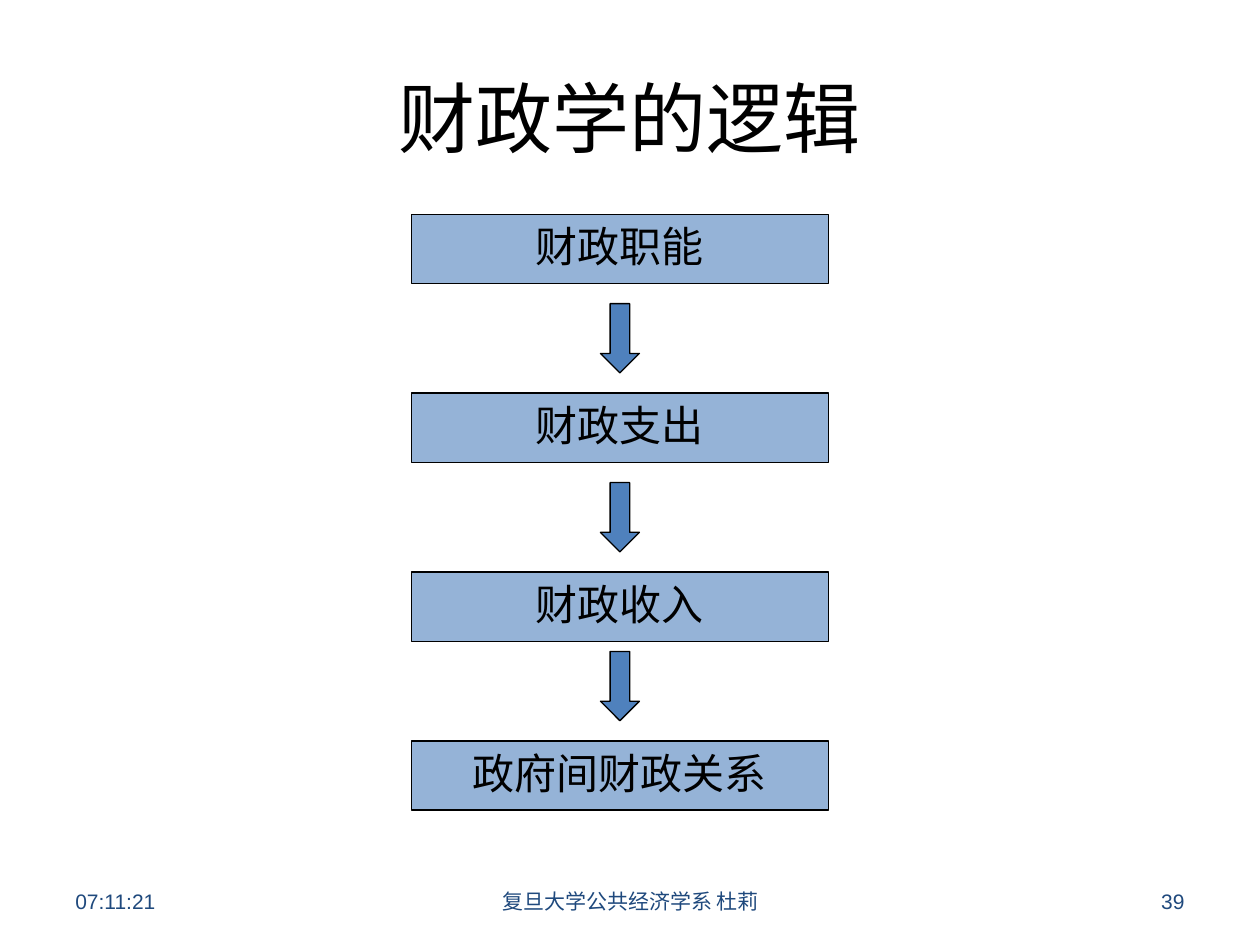
from pptx import Presentation
from pptx.dml.color import RGBColor
from pptx.enum.shapes import MSO_SHAPE
from pptx.enum.text import MSO_ANCHOR, PP_ALIGN
from pptx.util import Inches, Pt

BLACK = RGBColor(0x00, 0x00, 0x00)
NAVY = RGBColor(0x1F, 0x49, 0x7D)
BLUE = RGBColor(0x4F, 0x81, 0xBD)
PALE = RGBColor(0x95, 0xB3, 0xD7)

WIDE, HIGH = 10, 7.5
MID = 4.92  # centre line of the flow
STEP_W, ARROW_W, ROW_H = 3.31, 0.31, 0.55

# Each step with its top, and the top of each arrow between steps
STEPS = [("财政职能", 1.7), ("财政支出", 3.12), ("财政收入", 4.54), ("政府间财政关系", 5.88)]
ARROWS = [2.41, 3.83, 5.17]

# Footer: text, left, width, alignment
FOOT = [
    ("07:11:21", 0.5, 2.33, PP_ALIGN.LEFT),
    ("复旦大学公共经济学系 杜莉", 3.42, 3.17, PP_ALIGN.CENTER),
    ("39", 7.17, 2.33, PP_ALIGN.RIGHT),
]


def write(frame, text, size, color, align, font="Arial"):
    para = frame.paragraphs[0]
    para.text = text
    para.alignment = align
    para.font.size = Pt(size)
    para.font.name = font
    para.font.color.rgb = color


def add_label(slide, area, *style):
    box = slide.shapes.add_textbox(*map(Inches, area))
    box.text_frame.word_wrap = True
    box.text_frame.vertical_anchor = MSO_ANCHOR.MIDDLE
    write(box.text_frame, *style)


def add_block(slide, kind, top, width, fill):
    area = (MID - width / 2, top, width, ROW_H)
    block = slide.shapes.add_shape(kind, *map(Inches, area))
    block.shadow.inherit = False
    block.fill.solid()
    block.fill.fore_color.rgb = fill
    block.line.color.rgb = BLACK
    block.line.width = Pt(0.75)
    return block


def add_step(slide, text, top):
    frame = add_block(slide, MSO_SHAPE.RECTANGLE, top, STEP_W, PALE).text_frame
    frame.word_wrap = False
    frame.vertical_anchor = MSO_ANCHOR.TOP
    write(frame, text, 24, BLACK, PP_ALIGN.CENTER)


def main():
    deck = Presentation()
    deck.slide_width, deck.slide_height = Inches(WIDE), Inches(HIGH)
    slide = deck.slides.add_slide(deck.slide_layouts[6])

    # Title
    area = (WIDE * 0.05, HIGH * 0.04, WIDE * 0.9, 1.25)
    add_label(slide, area, "财政学的逻辑", 44, BLACK, PP_ALIGN.CENTER, "Calibri")

    # Flow of steps and arrows
    for text, top in STEPS:
        add_step(slide, text, top)
    for top in ARROWS:
        add_block(slide, MSO_SHAPE.DOWN_ARROW, top, ARROW_W, BLUE)

    # Footer
    for text, left, width, align in FOOT:
        add_label(slide, (left, 6.95, width, 0.4), text, 12, NAVY, align)

    deck.save("out.pptx")


if __name__ == "__main__":
    main()
